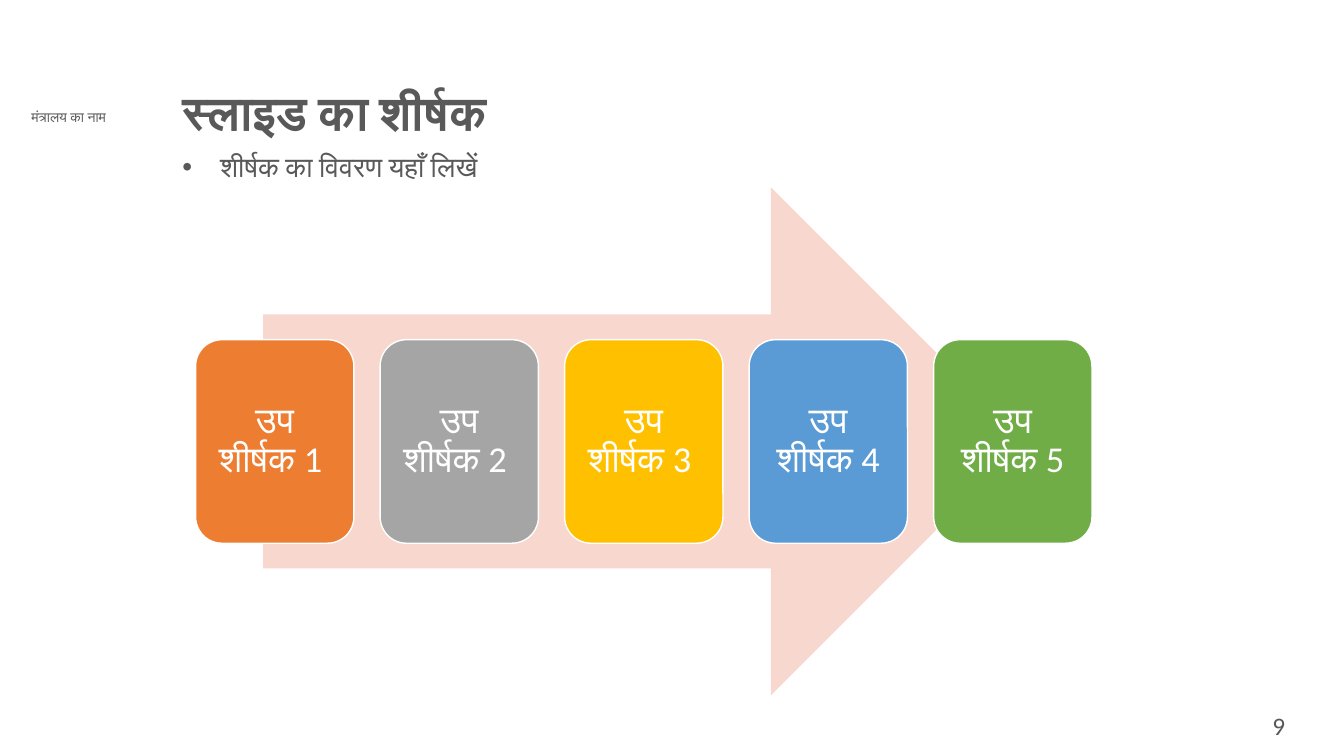
from dataclasses import dataclass
from lxml.etree import SubElement
from pptx import Presentation
from pptx.dml.color import RGBColor
from pptx.enum.shapes import MSO_SHAPE
from pptx.enum.text import MSO_ANCHOR, MSO_AUTO_SIZE, PP_ALIGN
from pptx.oxml.ns import qn
from pptx.util import Cm, Pt

HUES = {
    "text": "595959",
    "white": "FFFFFF",
    "arrow": "F8D7CE",
    "orange": "ED7D31",
    "grey": "A5A5A5",
    "gold": "FFC000",
    "blue": "5B9BD5",
    "green": "70AD47",
}


@dataclass
class Box:
    left: float
    top: float
    width: float
    height: float


@dataclass
class Style:
    size: int
    hue: str = "text"
    face: str = "Calibri"
    bold: bool = False
    align: PP_ALIGN = PP_ALIGN.CENTER
    anchor: MSO_ANCHOR = MSO_ANCHOR.TOP
    lines: float = 1.0


@dataclass
class Card:
    text: str
    hue: str


CARDS = [
    Card("उप शीर्षक 1 ", "orange"),
    Card("उप शीर्षक 2 ", "grey"),
    Card("उप शीर्षक 3 ", "gold"),
    Card("उप शीर्षक 4", "blue"),
    Card("उप शीर्षक 5", "green"),
]
FIRST = Box(4.93, 8.56, 3.99, 5.13)
PITCH = 4.65


def tint(name: str) -> RGBColor:
    return RGBColor.from_string(HUES[name])


def span(box: Box) -> tuple:
    return Cm(box.left), Cm(box.top), Cm(box.width), Cm(box.height)


def write(shape, text: str, style: Style) -> None:
    frame = shape.text_frame
    frame.text = text
    frame.word_wrap = True
    frame.auto_size = MSO_AUTO_SIZE.NONE
    frame.vertical_anchor = style.anchor
    para = frame.paragraphs[0]
    para.alignment = style.align
    para.line_spacing = style.lines
    para.space_before = Pt(0)
    run = para.runs[0]
    run.font.size = Pt(style.size)
    run.font.bold = style.bold
    run.font.name = style.face
    run.font.color.rgb = tint(style.hue)
    SubElement(run.font._element, qn("a:cs")).set("typeface", style.face)


def place(holder, box: Box, text: str, style: Style) -> None:
    holder.left, holder.top, holder.width, holder.height = span(box)
    write(holder, text, style)


def label(slide, box: Box, text: str, style: Style) -> None:
    write(slide.shapes.add_textbox(*span(box)), text, style)


def block(slide, kind: MSO_SHAPE, box: Box, hue: str):
    shape = slide.shapes.add_shape(kind, *span(box))
    shape.shadow.inherit = False
    shape.fill.solid()
    shape.fill.fore_color.rgb = tint(hue)
    shape.line.fill.background()
    return shape


def draw(slide, card: Card, box: Box) -> None:
    shape = block(slide, MSO_SHAPE.ROUNDED_RECTANGLE, box, card.hue)
    shape.line.color.rgb = tint("white")
    shape.line.width = Pt(1)
    frame = shape.text_frame
    frame.margin_left = frame.margin_right = Cm(0.28)
    frame.margin_top = frame.margin_bottom = Cm(0.28)
    write(shape, card.text, Style(26, "white", anchor=MSO_ANCHOR.MIDDLE, lines=0.9))


def main() -> None:
    deck = Presentation()
    deck.slide_width, deck.slide_height = Cm(33.87), Cm(19.05)
    slide = deck.slides.add_slide(deck.slide_layouts[1])

    label(slide, Box(0.08, 2.62, 3.3, 0.69), "मंत्रालय का नाम", Style(10, face="Lato"))
    place(slide.shapes.title, Box(4.34, 2.13, 24.41, 1.4), "स्लाइड का शीर्षक",
          Style(34, bold=True, align=PP_ALIGN.LEFT, lines=0.9))
    body = slide.placeholders[1]
    props = body.text_frame.paragraphs[0]._p.get_or_add_pPr()
    props.set("marL", "0")
    props.set("indent", "0")
    SubElement(props, qn("a:buNone"))
    place(body, Box(4.34, 3.73, 24.41, 1.6), "शीर्षक का विवरण यहाँ लिखें",
          Style(20, align=PP_ALIGN.LEFT, lines=0.9))

    block(slide, MSO_SHAPE.RIGHT_ARROW, Box(6.63, 4.72, 19.2, 12.8), "arrow")
    for index, card in enumerate(CARDS):
        left = FIRST.left + index * PITCH
        draw(slide, card, Box(left, FIRST.top, FIRST.width, FIRST.height))

    label(slide, Box(30.73, 17.78, 3.0, 1.14), "9", Style(18))
    deck.save("out.pptx")


if __name__ == "__main__":
    main()
